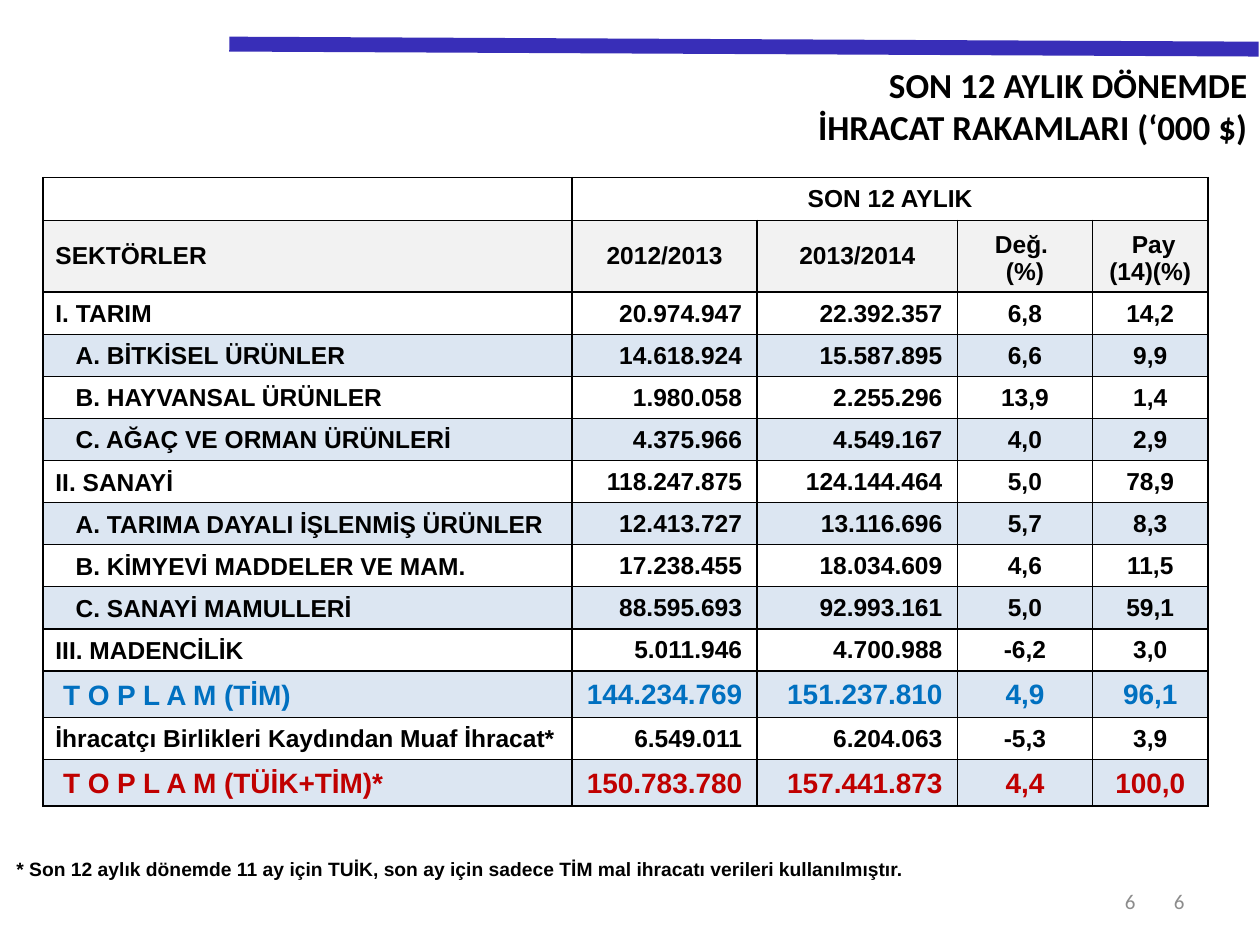
from lxml import etree
from pptx import Presentation
from pptx.dml.color import RGBColor
from pptx.enum.shapes import MSO_CONNECTOR
from pptx.enum.text import MSO_ANCHOR, PP_ALIGN
from pptx.oxml.ns import qn
from pptx.util import Inches, Pt

LEFT, CENTER, RIGHT = PP_ALIGN.LEFT, PP_ALIGN.CENTER, PP_ALIGN.RIGHT
MIDDLE, BOTTOM = MSO_ANCHOR.MIDDLE, MSO_ANCHOR.BOTTOM
STRAIGHT = MSO_CONNECTOR.STRAIGHT

BLACK = RGBColor(0x00, 0x00, 0x00)
GRAY = RGBColor(0x8C, 0x8C, 0x8C)
INDIGO = RGBColor(0x38, 0x2E, 0xB8)
BLUE = RGBColor(0x00, 0x70, 0xC0)
RED = RGBColor(0xC0, 0x00, 0x00)
HEADER_FILL = RGBColor(0xF2, 0xF2, 0xF2)
BAND_FILL = RGBColor(0xDC, 0xE6, 0xF2)

TITLE = {"name": "Calibri", "size": Pt(20), "bold": True}
NUMBER = {"name": "Calibri", "size": Pt(12), "bold": False}
BODY = {"name": "Arial", "size": Pt(14), "bold": True}
TOTAL = {"name": "Arial", "size": Pt(16), "bold": True}
NOTE = {"name": "Arial", "size": Pt(11), "bold": True}


def write(frame, text, align, font_format, color=BLACK):
    for index, line in enumerate(text.split("\n")):
        paragraph = frame.paragraphs[0] if index == 0 else frame.add_paragraph()
        paragraph.alignment = align
        run = paragraph.add_run()
        run.text = line
        for name, value in font_format.items():
            setattr(run.font, name, value)
        run.font.color.rgb = color


def style_cell(cell, margins, anchor, fill=None, bordered=True):
    for side, margin in zip(("left", "top", "right", "bottom"), margins):
        setattr(cell, f"margin_{side}", Inches(margin))
    cell.vertical_anchor = anchor
    if bordered:
        properties = cell._tc.get_or_add_tcPr()
        for edge in ("a:lnL", "a:lnR", "a:lnT", "a:lnB"):
            border = etree.SubElement(properties, qn(edge), w=str(Pt(1)))
            solid = etree.SubElement(border, qn("a:solidFill"))
            etree.SubElement(solid, qn("a:srgbClr"), val=str(BLACK))
    if fill is None:
        cell.fill.background()
    else:
        cell.fill.solid()
        cell.fill.fore_color.rgb = fill


presentation = Presentation()
presentation.slide_width = Inches(10)
presentation.slide_height = Inches(7.5)
slide = presentation.slides.add_slide(presentation.slide_layouts[6])

rule = slide.shapes.add_connector(STRAIGHT, Inches(1.82), Inches(0.35), Inches(9.99), Inches(0.39))
rule.line.color.rgb = INDIGO
rule.line.width = Pt(8.5)
etree.SubElement(rule._element.spPr, qn("a:effectLst"))

texts = [
    ("6", (7.17, 6.95, 2.33, 0.4), MIDDLE, NUMBER, GRAY),
    ("6", (7.01, 6.95, 2.1, 0.4), MIDDLE, NUMBER, GRAY),
    ("SON 12 AYLIK DÖNEMDE\nİHRACAT RAKAMLARI (‘000 $)", (1.06, 0.45, 8.94, 0.77), MIDDLE, TITLE, BLACK),
]
for text, place, anchor, font_format, color in texts:
    frame = slide.shapes.add_textbox(*map(Inches, place)).text_frame
    frame.word_wrap = True
    frame.vertical_anchor = anchor
    write(frame, text, RIGHT, font_format, color)

headings = ["SEKTÖRLER", "2012/2013", "2013/2014", "Değ. \n(%)", " Pay\n(14)(%)"]
sectors = [
    ("I. TARIM", "20.974.947", "22.392.357", "6,8", "14,2"),
    ("A. BİTKİSEL ÜRÜNLER", "14.618.924", "15.587.895", "6,6", "9,9"),
    ("B. HAYVANSAL ÜRÜNLER", "1.980.058", "2.255.296", "13,9", "1,4"),
    ("C. AĞAÇ VE ORMAN ÜRÜNLERİ", "4.375.966", "4.549.167", "4,0", "2,9"),
    ("II. SANAYİ", "118.247.875", "124.144.464", "5,0", "78,9"),
    ("A. TARIMA DAYALI İŞLENMİŞ ÜRÜNLER", "12.413.727", "13.116.696", "5,7", "8,3"),
    ("B. KİMYEVİ MADDELER VE MAM.", "17.238.455", "18.034.609", "4,6", "11,5"),
    ("C. SANAYİ MAMULLERİ", "88.595.693", "92.993.161", "5,0", "59,1"),
    ("III. MADENCİLİK", "5.011.946", "4.700.988", "-6,2", "3,0"),
    ("T O P L A M (TİM)", "144.234.769", "151.237.810", "4,9", "96,1"),
    ("İhracatçı Birlikleri Kaydından Muaf İhracat*", "6.549.011", "6.204.063", "-5,3", "3,9"),
    ("T O P L A M (TÜİK+TİM)*", "150.783.780", "157.441.873", "4,4", "100,0"),
]
total_colors = {9: BLUE, 11: RED}
column_widths = [4.2, 1.47, 1.59, 1.07, 0.92]
row_heights = [0.34, 0.57] + [0.37 if i in total_colors else 0.33 for i in range(len(sectors))]

exports = slide.shapes.add_table(
    len(row_heights), len(column_widths), Inches(0.34), Inches(1.41),
    Inches(sum(column_widths)), Inches(sum(row_heights))).table
exports.first_row = exports.horz_banding = False
for column, width in zip(exports.columns, column_widths):
    column.width = Inches(width)
for row, height in zip(exports.rows, row_heights):
    row.height = Inches(height)

for column in range(len(column_widths)):
    style_cell(exports.cell(0, column), (0, 0, 0, 0), MIDDLE)
exports.cell(0, 1).merge(exports.cell(0, 4))
write(exports.cell(0, 1).text_frame, "SON 12 AYLIK", CENTER, BODY)

for column, heading in enumerate(headings):
    cell = exports.cell(1, column)
    style_cell(cell, (0.1, 0.05, 0.1, 0.05), BOTTOM if "\n" in heading else MIDDLE, HEADER_FILL)
    write(cell.text_frame, heading, CENTER if column else LEFT, BODY)

for index, values in enumerate(sectors):
    color = total_colors.get(index, BLACK)
    font_format = TOTAL if index in total_colors else BODY
    fill = BAND_FILL if index % 2 else None
    indent = 0.06 if index in total_colors else 0.16 if values[0][1] == "." and values[0][0] in "ABC" else 0
    for column, value in enumerate(values):
        cell = exports.cell(index + 2, column)
        if column == 0:
            margins, anchor, align = (0.1 + indent, 0.05, 0.05, 0.05), BOTTOM, LEFT
        elif column < 3:
            margins, anchor, align = (0.01, 0.01, 0.12, 0), MIDDLE, RIGHT
        else:
            margins, anchor, align = (0.01, 0.01, 0.01, 0), MIDDLE, CENTER
        style_cell(cell, margins, anchor, fill)
        write(cell.text_frame, value, align, font_format, color)

footnote = slide.shapes.add_table(2, 1, Inches(0.12), Inches(6.74), Inches(7.4), Inches(0.62)).table
footnote.first_row = footnote.horz_banding = False
for row in footnote.rows:
    style_cell(row.cells[0], (0.01, 0.01, 0.01, 0), MIDDLE, bordered=False)
write(
    footnote.cell(0, 0).text_frame,
    "* Son 12 aylık dönemde 11 ay için TUİK, son ay için sadece TİM mal ihracatı verileri kullanılmıştır.",
    LEFT, NOTE)

presentation.save("out.pptx")
